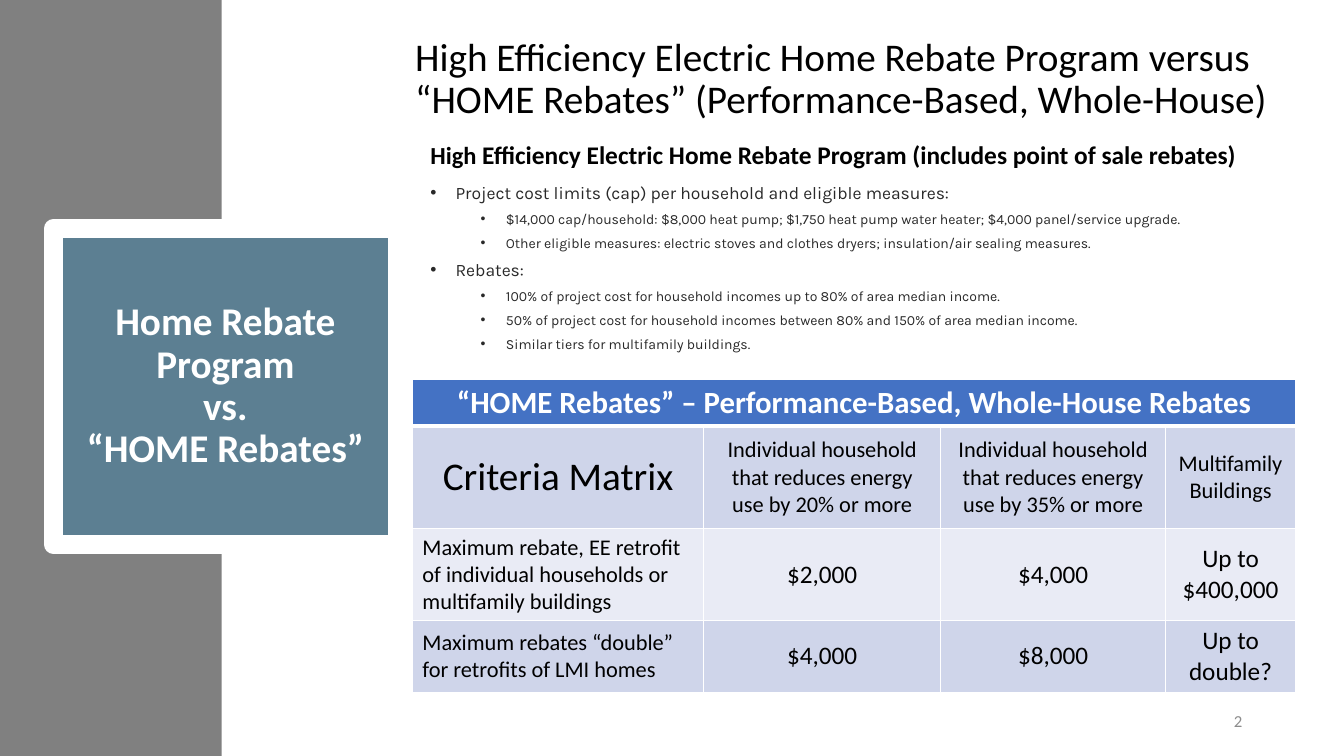
from pptx import Presentation
from pptx.dml.color import RGBColor
from pptx.enum.shapes import MSO_SHAPE as SHAPE
from pptx.enum.text import MSO_ANCHOR as ANCHOR, PP_ALIGN as ALIGN
from pptx.oxml.ns import qn
from pptx.util import Inches, Pt
from lxml.etree import SubElement

COLORS = {
    "white": "FFFFFF", "black": "000000", "sidebar": "808080", "panel": "5C7F92",
    "number": "8C8C8C", "bullet": "292929",
    "header": "4472C4", "band_dark": "CFD5EA", "band_light": "E9EBF5",
}

HEADING = [("High ", 17.5),
           ("Efficiency Electric Home Rebate Program (includes point of sale rebates)", 18.1)]

# level, space before, text
BULLETS = [
    (0, 10, "Project cost limits (cap) per household and eligible measures:"),
    (1, 5, "$14,000 cap/household: $8,000 heat pump; $1,750 heat pump water heater; "
           "$4,000 panel/service upgrade."),
    (1, 5, "Other eligible measures: electric stoves and clothes dryers; "
           "insulation/air sealing measures."),
    (0, 6, "Rebates:"),
    (1, 5, "100% of project cost for household incomes up to 80% of area median income."),
    (1, 5, "50% of project cost for household incomes between 80% and 150% of area median income."),
    (1, 5, "Similar tiers for multifamily buildings."),
]

TABLE_TITLE = "“HOME Rebates” – Performance-Based, Whole-House Rebates"
CRITERIA = [
    ["Criteria Matrix", "Individual household that reduces energy use by 20% or more",
     "Individual household that reduces energy use by 35% or more", "Multifamily Buildings"],
    ["Maximum rebate, EE retrofit of individual households or multifamily buildings",
     "$2,000", "$4,000", "Up to $400,000"],
    ["Maximum rebates “double” for retrofits of LMI homes",
     "$4,000", "$8,000", "Up to double?"],
]
COL_WIDTHS = [2.89, 2.35, 2.23, 1.29]
ROW_HEIGHTS = [0.46, 1.02, 0.91, 0.71]


class SlideBuilder:
    def __init__(self, slide, font="Calibri"):
        self.s = slide
        self.font = font

    def color(self, name):
        return RGBColor.from_string(COLORS[name])

    def style_run(self, r, size, color, bold=False, font=None):
        r.font.name = font or self.font
        r.font.size = Pt(size)
        r.font.bold = bold
        r.font.color.rgb = self.color(color)

    def set_text(self, tf, text, size, color, align=ALIGN.LEFT, bold=False, spacing=None):
        tf.text = text
        tf.word_wrap = True
        p = tf.paragraphs[0]
        p.alignment = align
        if spacing:
            p.line_spacing = spacing
        for r in p.runs:
            self.style_run(r, size, color, bold)

    def box(self, x, y, w, h, fill, border=None, border_width=0):
        sp = self.s.shapes.add_shape(SHAPE.RECTANGLE, Inches(x), Inches(y), Inches(w), Inches(h))
        sp.shadow.inherit = False
        sp.fill.solid()
        sp.fill.fore_color.rgb = self.color(fill)
        if border:
            sp.line.color.rgb = self.color(border)
            sp.line.width = Pt(border_width)
            SubElement(sp._element.spPr.find(qn("a:ln")), qn("a:round"))
        else:
            sp.line.fill.background()
        return sp

    def text(self, x, y, w, h, anchor=ANCHOR.TOP):
        tf = self.s.shapes.add_textbox(Inches(x), Inches(y), Inches(w), Inches(h)).text_frame
        tf.word_wrap = True
        tf.vertical_anchor = anchor
        return tf

    def bullet(self, tf, level, before, text):
        p = tf.add_paragraph()
        p.text = text
        p.level = level
        p.space_before = Pt(before)
        self.style_run(p.runs[0], 10 if level else 12.5, "bullet", font="Karla")
        pPr = p._p.get_or_add_pPr()
        pPr.set("marL", str(Inches(0.25 + 0.5 * level)))
        pPr.set("indent", str(Inches(-0.25)))
        SubElement(pPr, qn("a:buFont")).set("typeface", "Arial")
        SubElement(pPr, qn("a:buChar")).set("char", "•")

    def table(self, x, y, col_widths, row_heights):
        tbl = self.s.shapes.add_table(
            len(row_heights), len(col_widths), Inches(x), Inches(y),
            Inches(sum(col_widths)), Inches(sum(row_heights))).table
        for col, w in zip(tbl.columns, col_widths):
            col.width = Inches(w)
        for row, h in zip(tbl.rows, row_heights):
            row.height = Inches(h)
        return tbl

    def cell(self, cell, text, size, color, fill, align, bold=False, top=1, bottom=1):
        self.set_text(cell.text_frame, text, size, color, align, bold)
        cell.vertical_anchor = ANCHOR.MIDDLE
        tcPr = cell._tc.get_or_add_tcPr()
        for side, width in zip("LRTB", (1, 1, top, bottom)):
            ln = SubElement(tcPr, qn("a:ln" + side), w=str(Pt(width)))
            SubElement(SubElement(ln, qn("a:solidFill")), qn("a:srgbClr"), val=COLORS["white"])
        cell.fill.solid()
        cell.fill.fore_color.rgb = self.color(fill)


def add_criteria_table(b):
    tbl = b.table(4.09, 3.76, COL_WIDTHS, ROW_HEIGHTS)
    for c in range(len(COL_WIDTHS)):
        b.cell(tbl.cell(0, c), "" if c else TABLE_TITLE, 22, "white", "header",
               ALIGN.CENTER, bold=True, bottom=3)
    tbl.cell(0, 0).merge(tbl.cell(0, len(COL_WIDTHS) - 1))
    for i, row in enumerate(CRITERIA):
        for j, text in enumerate(row):
            size = 28 if i == j == 0 else 18 if i and j else 16
            b.cell(tbl.cell(i + 1, j), text, size, "black",
                   "band_light" if i % 2 else "band_dark",
                   ALIGN.LEFT if i and not j else ALIGN.CENTER, top=1 if i else 3)


def main():
    prs = Presentation()
    prs.slide_width, prs.slide_height = Inches(13.33), Inches(7.5)
    b = SlideBuilder(prs.slides.add_slide(prs.slide_layouts[6]))

    b.box(0, 0, 2.2, 7.5, "sidebar")
    panel = b.box(0.53, 2.27, 3.41, 3.13, "panel", "white", 13.75)
    panel.text_frame.vertical_anchor = ANCHOR.MIDDLE
    b.set_text(panel.text_frame, "Home Rebate Program\vvs.\v“HOME Rebates”", 28, "white",
               ALIGN.CENTER, bold=True, spacing=0.9)

    b.set_text(b.text(4.02, 0.32, 8.93, 1),
               "High Efficiency Electric Home Rebate Program versus "
               "“HOME Rebates” (Performance-Based, Whole-House)", 28, "black", spacing=0.9)
    b.set_text(b.text(9.42, 6.95, 3, 0.4, ANCHOR.MIDDLE), "2", 12, "number", ALIGN.RIGHT)
    add_criteria_table(b)

    tf = b.text(4.17, 1.41, 8.93, 2.29)
    p = tf.paragraphs[0]
    p.line_spacing = 0.7
    p.space_before = Pt(10)
    for text, size in HEADING:
        r = p.add_run()
        r.text = text
        b.style_run(r, size, "black", bold=True)
    for item in BULLETS:
        b.bullet(tf, *item)

    prs.save("out.pptx")


if __name__ == "__main__":
    main()
